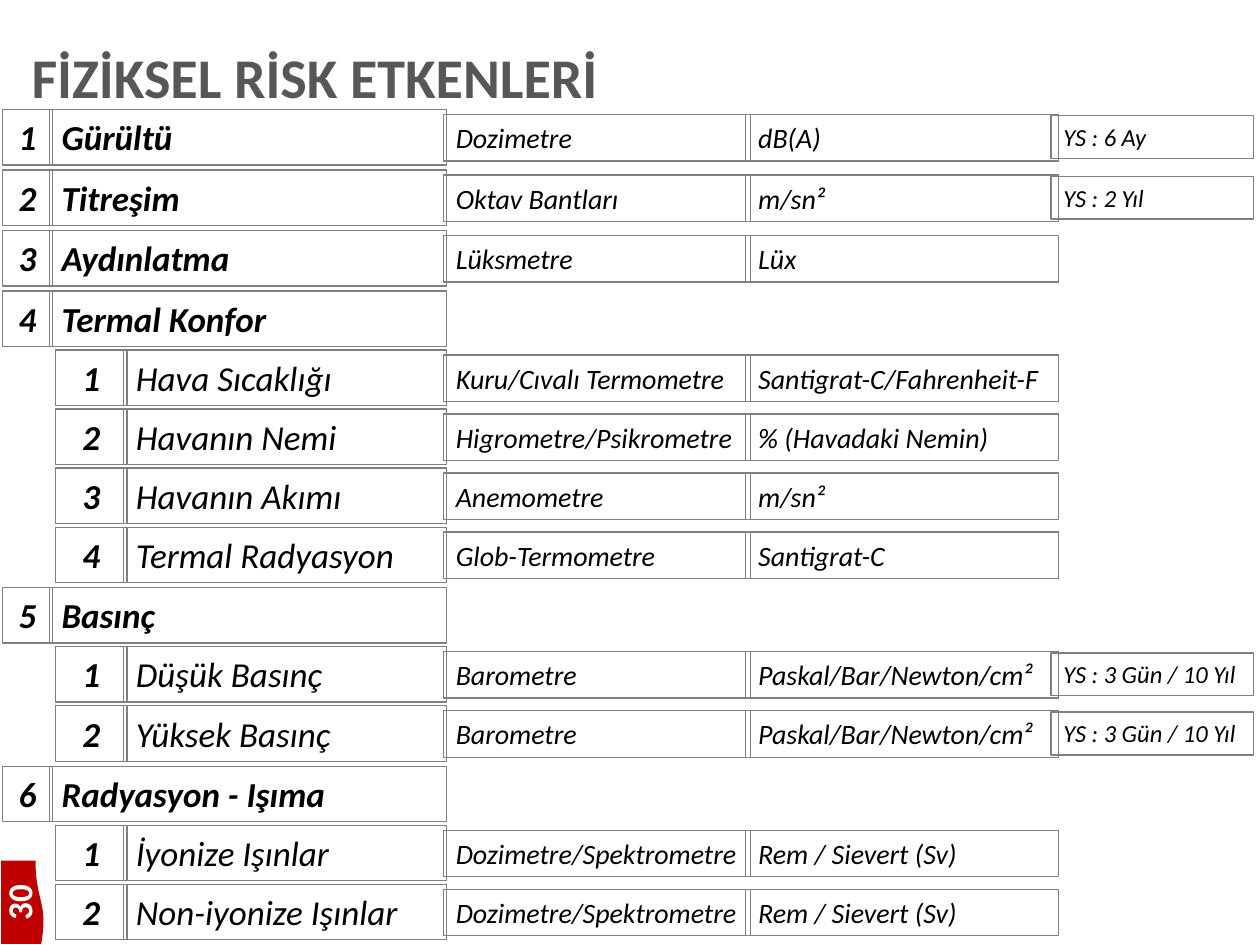
import pptx
import pptx.util
import pptx.dml.color
import pptx.enum.shapes
import pptx.enum.text

Pt = pptx.util.Pt
RGBColor = pptx.dml.color.RGBColor
ALIGN = pptx.enum.text.PP_ALIGN
ANCHOR = pptx.enum.text.MSO_ANCHOR
SHAPES = pptx.enum.shapes.MSO_SHAPE

BLACK = RGBColor(0x00, 0x00, 0x00)
WHITE = RGBColor(0xFF, 0xFF, 0xFF)
GRAY = RGBColor(0x80, 0x80, 0x80)
TITLE_GRAY = RGBColor(0x57, 0x57, 0x57)
RED = RGBColor(0xC0, 0x00, 0x00)

MAIN_STEP, SUB_STEP = 34.56, 33.75
ROWS = [
    ("main", "1", "Gürültü", "Dozimetre", "dB(A)", "YS : 6 Ay"),
    ("main", "2", "Titreşim", "Oktav Bantları", "m/sn²", "YS : 2 Yıl"),
    ("main", "3", "Aydınlatma", "Lüksmetre", "Lüx", ""),
    ("main", "4", "Termal Konfor", "", "", ""),
    ("sub", "1", "Hava Sıcaklığı", "Kuru/Cıvalı Termometre", "Santigrat-C/Fahrenheit-F", ""),
    ("sub", "2", "Havanın Nemi", "Higrometre/Psikrometre", "% (Havadaki Nemin)", ""),
    ("sub", "3", "Havanın Akımı", "Anemometre", "m/sn²", ""),
    ("sub", "4", "Termal Radyasyon", "Glob-Termometre", "Santigrat-C", ""),
    ("main", "5", "Basınç", "", "", ""),
    ("sub", "1", "Düşük Basınç", "Barometre", "Paskal/Bar/Newton/cm²", "YS : 3 Gün / 10 Yıl"),
    ("sub", "2", "Yüksek Basınç", "Barometre", "Paskal/Bar/Newton/cm²", "YS : 3 Gün / 10 Yıl"),
    ("main", "6", "Radyasyon - Işıma", "", "", ""),
    ("sub", "1", "İyonize Işınlar", "Dozimetre/Spektrometre", "Rem / Sievert (Sv)", ""),
    ("sub", "2", "Non-iyonize Işınlar", "Dozimetre/Spektrometre", "Rem / Sievert (Sv)", ""),
]
MEASURE_COLUMNS = [
    (253.4, 2.8, 175.6, 26.6, 16, False, ALIGN.LEFT),
    (426.2, 2.8, 178.6, 26.6, 16, False, ALIGN.LEFT),
    (600.5, 3.6, 115.9, 24.5, 14, False, ALIGN.LEFT),
]
COLUMNS = {
    "main": [
        (1.4, 0, 28.8, 31.7, 20, True, ALIGN.CENTER),
        (28.1, 0, 227.2, 31.7, 20, True, ALIGN.LEFT),
    ] + MEASURE_COLUMNS,
    "sub": [
        (31.7, 0, 41, 31.7, 20, True, ALIGN.CENTER),
        (70.6, 0, 184.7, 31.7, 20, False, ALIGN.LEFT),
    ] + MEASURE_COLUMNS,
}


def write_text(shape, text, alignment, frame_values, font_values, color):
    for name, value in frame_values.items():
        setattr(shape.text_frame, name, value)
    paragraph = shape.text_frame.paragraphs[0]
    paragraph.alignment = alignment
    run = paragraph.add_run()
    run.text = text
    for name, value in {"name": "Calibri", **font_values}.items():
        setattr(run.font, name, value)
    run.font.color.rgb = color


presentation = pptx.Presentation()
presentation.slide_width = Pt(720)
presentation.slide_height = Pt(540)
slide = presentation.slides.add_slide(presentation.slide_layouts[6])

title = slide.shapes.add_textbox(Pt(18), Pt(20.2), Pt(694), Pt(51))
write_text(
    title, "FİZİKSEL RİSK ETKENLERİ", ALIGN.LEFT,
    {"word_wrap": True, "vertical_anchor": ANCHOR.MIDDLE, "margin_left": 0, "margin_right": 0},
    {"size": Pt(32), "bold": True}, TITLE_GRAY,
)
title.text_frame.paragraphs[0].line_spacing = 0.9

page_badge = slide.shapes.add_shape(
    SHAPES.FLOWCHART_DOCUMENT, Pt(-10.8), Pt(503.3), Pt(47.5), Pt(24.5))
page_badge.rotation = 270
page_badge.shadow.inherit = False
page_badge.fill.solid()
page_badge.fill.fore_color.rgb = RED
page_badge.line.fill.background()
write_text(
    page_badge, "30", ALIGN.CENTER, {"vertical_anchor": ANCHOR.MIDDLE},
    {"size": Pt(20), "bold": True}, WHITE,
)

top = 62.6
for index, (level, *texts) in enumerate(ROWS):
    if index:
        top += MAIN_STEP if level == "main" else SUB_STEP
    for text, column in zip(texts, COLUMNS[level]):
        if not text:
            continue
        left, offset, width, height, size, bold, alignment = column
        cell = slide.shapes.add_shape(
            SHAPES.RECTANGLE, Pt(left), Pt(top + offset), Pt(width), Pt(height))
        cell.shadow.inherit = False
        cell.fill.background()
        cell.line.color.rgb = GRAY
        cell.line.width = Pt(0.75)
        write_text(
            cell, text, alignment,
            {
                "word_wrap": True,
                "vertical_anchor": ANCHOR.TOP,
                "auto_size": pptx.enum.text.MSO_AUTO_SIZE.SHAPE_TO_FIT_TEXT,
                "margin_right": Pt(7.2) if alignment == ALIGN.CENTER else 0,
            },
            {"size": Pt(size), "bold": bold, "italic": True}, BLACK,
        )

presentation.save("out.pptx")
